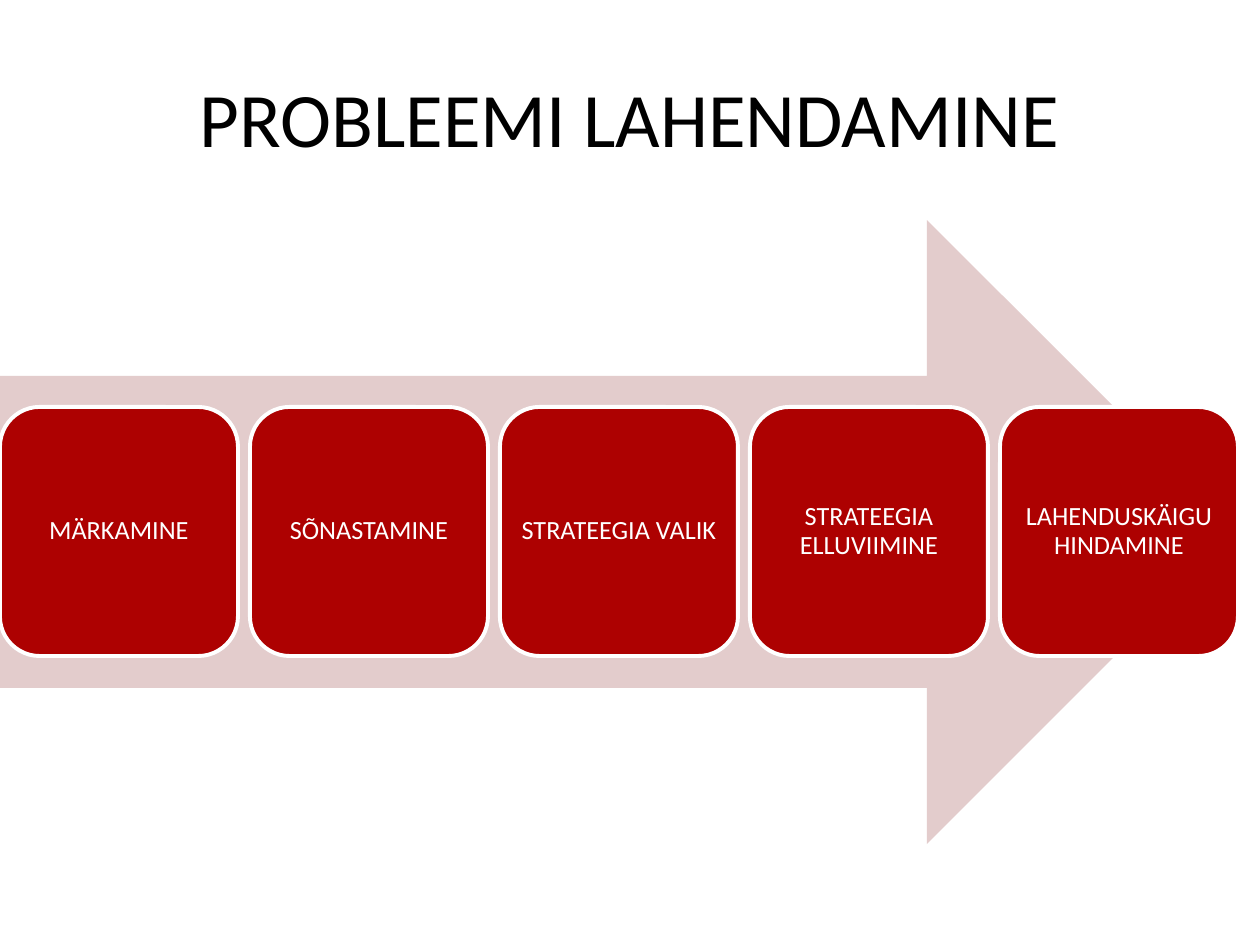
import pptx
import pptx.dml.color
import pptx.enum.shapes
import pptx.enum.text
import pptx.util

PX = 914400 / 126
COLORS = {"title": "000000", "arrow": "E3CCCC", "step": "AD0101", "white": "FFFFFF"}
STEPS = [
    "MÄRKAMINE",
    "SÕNASTAMINE",
    "STRATEEGIA VALIK",
    "STRATEEGIA ELLUVIIMINE",
    "LAHENDUSKÄIGU HINDAMINE",
]
STEP_WIDTH, STEP_HEIGHT, STEP_PITCH = 238, 249, 250


def px(*lengths):
    return [pptx.util.Emu(round(length * PX)) for length in lengths]


def write(shape, text, size, color, inset, line_spacing=1.0):
    frame = shape.text_frame
    frame.word_wrap = True
    frame.vertical_anchor = pptx.enum.text.MSO_ANCHOR.MIDDLE
    frame.margin_left, frame.margin_top, frame.margin_right, frame.margin_bottom = px(*[inset] * 4)
    paragraph = frame.paragraphs[0]
    paragraph.alignment = pptx.enum.text.PP_ALIGN.CENTER
    paragraph.line_spacing = line_spacing
    run = paragraph.add_run()
    run.text = text
    run.font.name = "Calibri"
    run.font.size = pptx.util.Pt(size)
    run.font.color.rgb = pptx.dml.color.RGBColor.from_string(COLORS[color])


presentation = pptx.Presentation()
presentation.slide_width, presentation.slide_height = px(1260, 945)
slide = presentation.slides.add_slide(presentation.slide_layouts[6])

title = slide.shapes.add_textbox(*px(63, 38, 1134, 158))
write(title, "PROBLEEMI LAHENDAMINE", size=44, color="title", inset=6)

process = slide.shapes.add_group_shape()
arrow = process.shapes.add_shape(
    pptx.enum.shapes.MSO_SHAPE.RIGHT_ARROW, *px(0, 220, 1239, 624)
)
arrow.shadow.inherit = False
arrow.fill.solid()
arrow.fill.fore_color.rgb = pptx.dml.color.RGBColor.from_string(COLORS["arrow"])
arrow.line.fill.background()

for index, label in enumerate(STEPS):
    step = process.shapes.add_shape(
        pptx.enum.shapes.MSO_SHAPE.ROUNDED_RECTANGLE,
        *px(index * STEP_PITCH, 407, STEP_WIDTH, STEP_HEIGHT),
    )
    step.shadow.inherit = False
    step.fill.solid()
    step.fill.fore_color.rgb = pptx.dml.color.RGBColor.from_string(COLORS["step"])
    step.line.color.rgb = pptx.dml.color.RGBColor.from_string(COLORS["white"])
    step.line.width = pptx.util.Pt(2.25)
    write(step, label, size=15, color="white", inset=7, line_spacing=0.9)

presentation.save("out.pptx")
